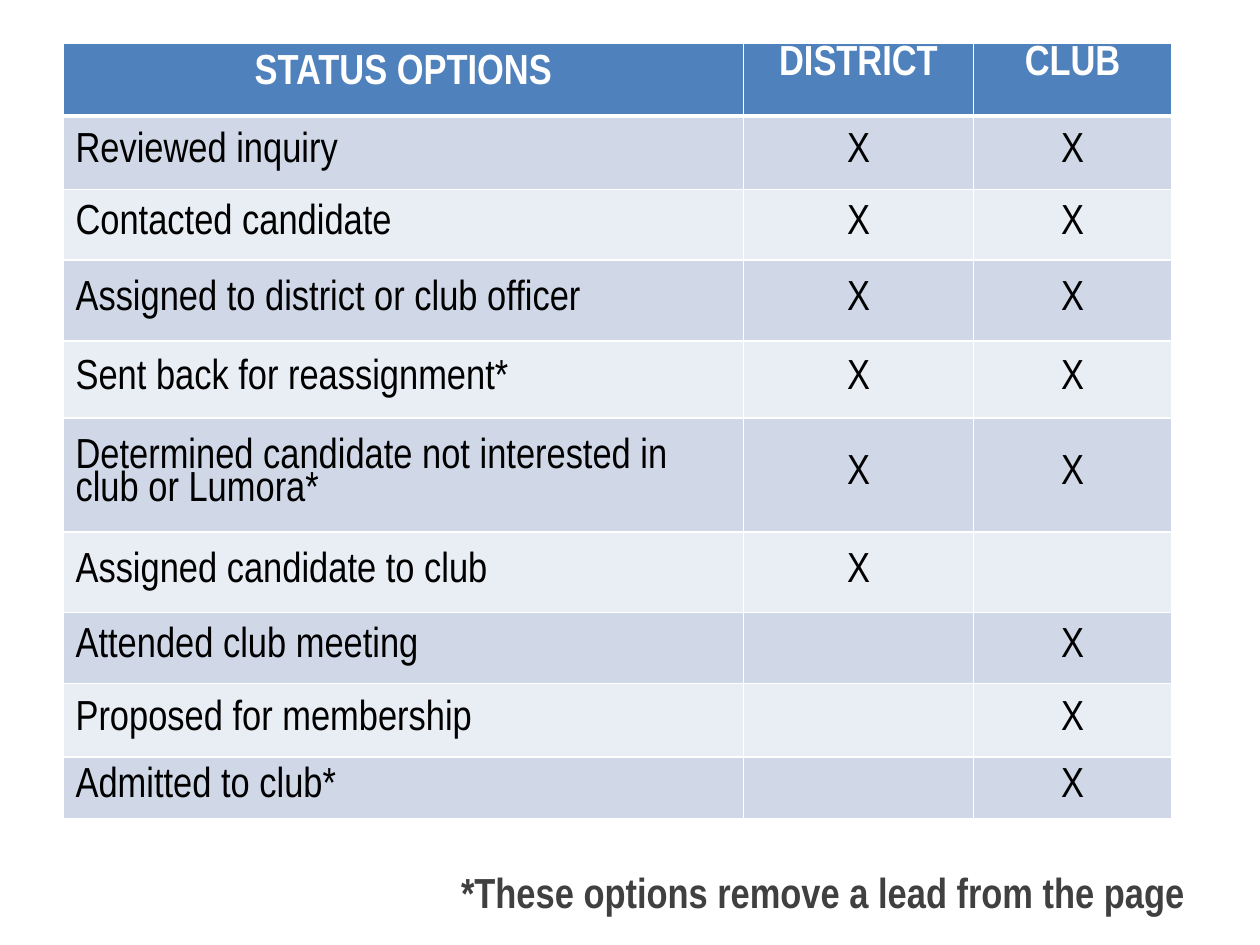
import pptx
import pptx.util
import pptx.dml.color
import pptx.enum.shapes
import pptx.enum.text
import pptx.oxml
import pptx.oxml.ns
from dataclasses import dataclass

ALIGN = pptx.enum.text.PP_ALIGN
ANCHOR = pptx.enum.text.MSO_ANCHOR


@dataclass(frozen=True)
class Theme:
    font: str = "Arial Narrow"
    size: int = 24
    line_spacing: float = 0.83
    white: str = "FFFFFF"
    black: str = "000000"
    header: str = "4F81BD"
    bands: tuple = ("D0D8E8", "E9EDF4")
    note: str = "404040"
    border: int = 1
    header_border: int = 3


class SlideBuilder:
    """Draws on one slide; boxes are given as shares of the slide's size."""

    def __init__(self, prs, theme):
        self.prs, self.theme = prs, theme
        self.slide = prs.slides.add_slide(prs.slide_layouts[6])

    def box(self, x, y, w, h):
        width, height = self.prs.slide_width, self.prs.slide_height
        return [int(share * side) for share, side in
                zip((x, y, w, h), (width, height, width, height))]

    def add_text(self, tf, text, color, bold, align, spacing=1.0):
        p = tf.paragraphs[0]
        p.alignment, p.line_spacing = align, spacing
        r = p.add_run()
        r.text = text
        style = {"name": self.theme.font, "bold": bold,
                 "size": pptx.util.Pt(self.theme.size)}
        for name, value in style.items():
            setattr(r.font, name, value)
        r.font.color.rgb = pptx.dml.color.RGBColor.from_string(color)

    def paint(self, item, color):
        item.fill.solid()
        item.fill.fore_color.rgb = pptx.dml.color.RGBColor.from_string(color)

    def cell_borders(self, cell, widths):
        tc_pr = cell._tc.get_or_add_tcPr()
        for side, width in zip("LRTB", widths):
            tc_pr.append(pptx.oxml.parse_xml(
                f'<a:ln{side} {pptx.oxml.ns.nsdecls("a")} w="{pptx.util.Pt(width)}">'
                f'<a:solidFill><a:srgbClr val="{self.theme.white}"/></a:solidFill>'
                f'</a:ln{side}>'))

    def table(self, box, rows, col_shares, row_shares):
        """Add a table with a header row, banded body rows and a left-aligned first column."""
        t = self.theme
        x, y, w, h = self.box(*box)
        table = self.slide.shapes.add_table(len(rows), len(rows[0]), x, y, w, h).table
        for col, share in zip(table.columns, col_shares):
            col.width = int(w * share / sum(col_shares))
        for row, share in zip(table.rows, row_shares):
            row.height = int(h * share / sum(row_shares))
        for i, texts in enumerate(rows):
            for j, text in enumerate(texts):
                cell = table.cell(i, j)
                head = i == 0
                top = t.header_border if i == 1 else t.border
                bottom = t.header_border if head else t.border
                self.cell_borders(cell, (t.border, t.border, top, bottom))
                self.paint(cell, t.header if head else t.bands[(i - 1) % 2])
                cell.vertical_anchor = ANCHOR.TOP if head else ANCHOR.MIDDLE
                if text:
                    self.add_text(cell.text_frame, text, t.white if head else t.black, head,
                                  ALIGN.CENTER if head or j else ALIGN.LEFT, t.line_spacing)
        table.cell(0, 0).margin_top = pptx.util.Inches(0.12)

    def note(self, box, text):
        sp = self.slide.shapes.add_shape(
            pptx.enum.shapes.MSO_SHAPE.RECTANGLE, *self.box(*box))
        sp.shadow.inherit = False
        self.paint(sp, self.theme.white)
        sp.line.fill.background()
        tf = sp.text_frame
        tf.word_wrap = True
        tf.vertical_anchor = ANCHOR.TOP
        self.add_text(tf, text, self.theme.note, True, ALIGN.RIGHT)


STATUS_ROWS = [
    ("STATUS OPTIONS", "DISTRICT", "CLUB"),
    ("Reviewed inquiry", "X", "X"),
    ("Contacted candidate", "X", "X"),
    ("Assigned to district or club officer", "X", "X"),
    ("Sent back for reassignment*", "X", "X"),
    ("Determined candidate not interested in club or Lumora*", "X", "X"),
    ("Assigned candidate to club", "X", ""),
    ("Attended club meeting", "", "X"),
    ("Proposed for membership", "", "X"),
    ("Admitted to club*", "", "X"),
]
COL_SHARES = (5.42, 1.83, 1.58)
ROW_SHARES = (0.58, 0.58, 0.56, 0.64, 0.61, 0.9, 0.64, 0.56, 0.58, 0.49)


def main():
    prs = pptx.Presentation()
    prs.slide_width, prs.slide_height = pptx.util.Inches(10), pptx.util.Inches(7.5)
    s = SlideBuilder(prs, Theme())
    s.table((0.05, 0.34 / 7.5, 0.88, 6.16 / 7.5), STATUS_ROWS, COL_SHARES, ROW_SHARES)
    s.note((0.23, 0.91, 0.72, 0.5 / 7.5), "*These options remove a lead from the page")
    prs.save("out.pptx")


if __name__ == "__main__":
    main()
